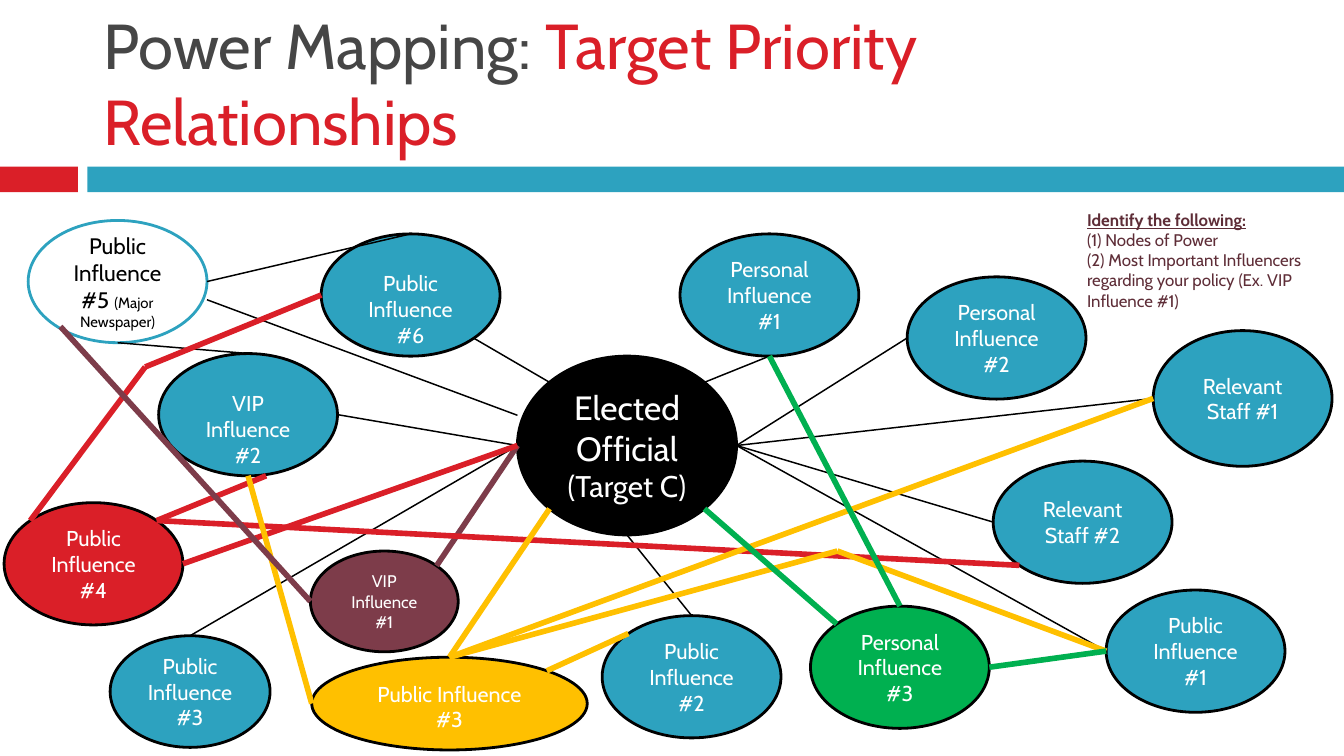
from math import cos, radians, sin

from lxml.etree import SubElement
from pptx import Presentation
from pptx.dml.color import RGBColor
from pptx.enum.shapes import MSO_CONNECTOR, MSO_SHAPE
from pptx.enum.text import MSO_ANCHOR, MSO_AUTO_SIZE, PP_ALIGN
from pptx.oxml.ns import qn
from pptx.util import Pt

FONT = "Cabin"
BLACK = RGBColor(0x00, 0x00, 0x00)
WHITE = RGBColor(0xFF, 0xFF, 0xFF)
GRAY = RGBColor(0x46, 0x46, 0x46)
RED = RGBColor(0xDA, 0x1F, 0x28)
TEAL = RGBColor(0x2D, 0xA2, 0xBF)
GOLD = RGBColor(0xFF, 0xC0, 0x00)
GREEN = RGBColor(0x00, 0xB0, 0x50)
PLUM = RGBColor(0x7D, 0x3C, 0x4A)
DARK_PLUM = RGBColor(0x5E, 0x2D, 0x37)

# Content: paragraphs are lists of (text, size) spans
TITLE = [[("Power Mapping: ", 34), ("Target Priority Relationships", 34)]]
NOTE = [
    [("Identify the following:", 9)],
    [("(1) Nodes of Power", 9)],
    [("(2) Most Important Influencers regarding your policy (Ex. VIP Influence #1)", 9)],
]
BARS = [(0, 41.8, RED), (46.8, 673.2, TEAL)]  # left, width, fill


def label(text, size=11.5):
    return [[(text, size)]]


# Nodes: left, top, fill, paragraphs
NODES = {
    "official": (277.2, 190.8, BLACK, [[("Elected Official", 18)], [("(Target C)", 16)]]),
    "personal 1": (364.3, 125.3, TEAL, label("Personal Influence #1")),
    "personal 2": (486, 148.3, TEAL, label("Personal Influence #2")),
    "personal 3": (434.2, 324.7, GREEN, label("Personal Influence #3")),
    "public 1": (592.6, 316.1, TEAL, label("Public Influence #1")),
    "public 2": (322.6, 329.8, TEAL, label("Public Influence #2")),
    "public 3": (59, 340.6, TEAL, label("Public Influence #3")),
    "public 3 gold": (167, 352.1, GOLD, label("Public Influence #3")),
    "public 4": (2.2, 269.3, RED, label("Public Influence #4")),
    "public 5": (15.1, 118.1, WHITE, [[("Public Influence #5 ", 12), ("(Major Newspaper)", 8)]]),
    "public 6": (172.1, 125.3, TEAL, label("Public Influence #6")),
    "staff 1": (617.8, 177.1, TEAL, label("Relevant Staff #1")),
    "staff 2": (532.1, 247, TEAL, label("Relevant Staff #2")),
    "vip 1": (166.3, 295.2, PLUM, label("VIP Influence #1", 9)),
    "vip 2": (85, 189.4, TEAL, label("VIP Influence #2")),
}
NODE_SIZE = (95.8, 65.5)
SPECIAL_SIZES = {
    "official": (117.4, 95.8),
    "staff 1": (95.8, 72.7),
    "public 3": (85.7, 59.8),
    "public 3 gold": (147.6, 49.7),
    "vip 1": (79.2, 54),
}
EXTRA_TOP_INSET = {"public 6": 15, "vip 2": 15, "public 3 gold": 3}

# Links: colour, then stops, each a (node, compass side) or an (x, y) point
ANGLES = {"E": 0, "SE": 45, "S": 90, "SW": 135, "W": 180, "NW": 225, "N": 270, "NE": 315}
LINKS = [
    (BLACK, ("official", "NW"), ("public 6", "SE")),
    (BLACK, ("official", "NE"), ("personal 1", "S")),
    (BLACK, ("official", "E"), ("public 1", "W")),
    (BLACK, ("official", "E"), ("personal 2", "W")),
    (BLACK, ("official", "E"), ("staff 1", "W")),
    (BLACK, ("official", "E"), ("staff 2", "W")),
    (BLACK, ("official", "W"), ("vip 2", "E")),
    (BLACK, ("official", "S"), ("public 2", "N")),
    (BLACK, ("public 3", "N"), ("official", "W")),
    (BLACK, (110.9, 160.6), (277.2, 222.5)),
    (BLACK, ("public 5", "S"), ("vip 2", "N")),
    (BLACK, ("public 5", "E"), ("public 6", "N")),
    (PLUM, ("official", "W"), ("vip 1", "NE")),
    (RED, ("public 4", "E"), ("official", "W")),
    (RED, ("staff 2", "SW"), ("public 4", "NE"), (142.6, 254.9)),
    (RED, ("public 4", "NW"), (77.8, 196.6), ("public 6", "W")),
    (GOLD, ("official", "SW"), ("public 3 gold", "N")),
    (GOLD, ("public 3 gold", "W"), ("vip 2", "S")),
    (GOLD, ("public 3 gold", "N"), ("staff 1", "W")),
    (GOLD, ("public 3 gold", "N"), (448.6, 295.2), ("public 1", "W")),
    (GOLD, ("public 3 gold", "NE"), ("public 2", "NW")),
    (GREEN, ("official", "SE"), ("personal 3", "NW")),
    (GREEN, ("personal 1", "S"), ("personal 3", "N")),
    (GREEN, ("personal 3", "E"), ("public 1", "W")),
    (PLUM, (32.4, 175), ("vip 1", "W")),
]


def write_text(frame, paragraphs, color, align):
    frame.word_wrap = True
    for index, spans in enumerate(paragraphs):
        para = frame.add_paragraph() if index else frame.paragraphs[0]
        para.alignment = align
        for text, size in spans:
            span = para.add_run()
            span.text = text
            span.font.name = FONT
            span.font.size = Pt(size)
            span.font.color.rgb = color


def add_filled(page, kind, left, top, width, height, fill):
    shape = page.shapes.add_shape(kind, Pt(left), Pt(top), Pt(width), Pt(height))
    shape.shadow.inherit = False
    shape.fill.solid()
    shape.fill.fore_color.rgb = fill
    return shape


def add_node(page, name):
    left, top, fill, paragraphs = NODES[name]
    node = add_filled(page, MSO_SHAPE.OVAL, left, top, *SPECIAL_SIZES.get(name, NODE_SIZE), fill)
    outlined = fill == WHITE
    node.line.color.rgb = TEAL if outlined else BLACK
    node.line.width = Pt(1.5)
    frame = node.text_frame
    frame.vertical_anchor = MSO_ANCHOR.MIDDLE
    frame.margin_top = Pt(3.6 + EXTRA_TOP_INSET.get(name, 0))
    write_text(frame, paragraphs, BLACK if outlined else WHITE, PP_ALIGN.CENTER)


def locate(stop):
    if stop[0] not in NODES:
        return stop
    name, side = stop
    left, top = NODES[name][:2]
    width, height = SPECIAL_SIZES.get(name, NODE_SIZE)
    angle = radians(ANGLES[side])
    return left + width / 2 * (1 + cos(angle)), top + height / 2 * (1 + sin(angle))


def add_link(page, color, start, end):
    ends = [Pt(value) for value in (*locate(start), *locate(end))]
    link = page.shapes.add_connector(MSO_CONNECTOR.STRAIGHT, *ends)
    link.line.color.rgb = color
    link.line.width = Pt(0.79 if color == BLACK else 3)
    SubElement(link._element.spPr, qn("a:effectLst"))


def main():
    deck = Presentation()
    deck.slide_width, deck.slide_height = Pt(720), Pt(405)
    page = deck.slides.add_slide(deck.slide_layouts[5])

    # Title and bars
    title = page.shapes.title
    title.left, title.top, title.width, title.height = Pt(48.2), Pt(9.4), Pt(642.2), Pt(79.2)
    frame = title.text_frame
    frame.auto_size = MSO_AUTO_SIZE.NONE
    frame.vertical_anchor = MSO_ANCHOR.BOTTOM
    write_text(frame, TITLE, GRAY, PP_ALIGN.LEFT)
    frame.paragraphs[0].runs[1].font.color.rgb = RED
    for left, width, fill in BARS:
        bar = add_filled(page, MSO_SHAPE.RECTANGLE, left, 89.3, width, 13.7, fill)
        bar.line.fill.background()

    # Power map
    for name in NODES:
        add_node(page, name)
    for color, *stops in LINKS:
        for start, end in zip(stops, stops[1:]):
            add_link(page, color, start, end)

    # Note
    box = page.shapes.add_textbox(Pt(575.3), Pt(108.7), Pt(144), Pt(61.9))
    write_text(box.text_frame, NOTE, DARK_PLUM, PP_ALIGN.LEFT)
    heading = box.text_frame.paragraphs[0].runs[0].font
    heading.bold = heading.underline = True

    deck.save("out.pptx")


if __name__ == "__main__":
    main()
